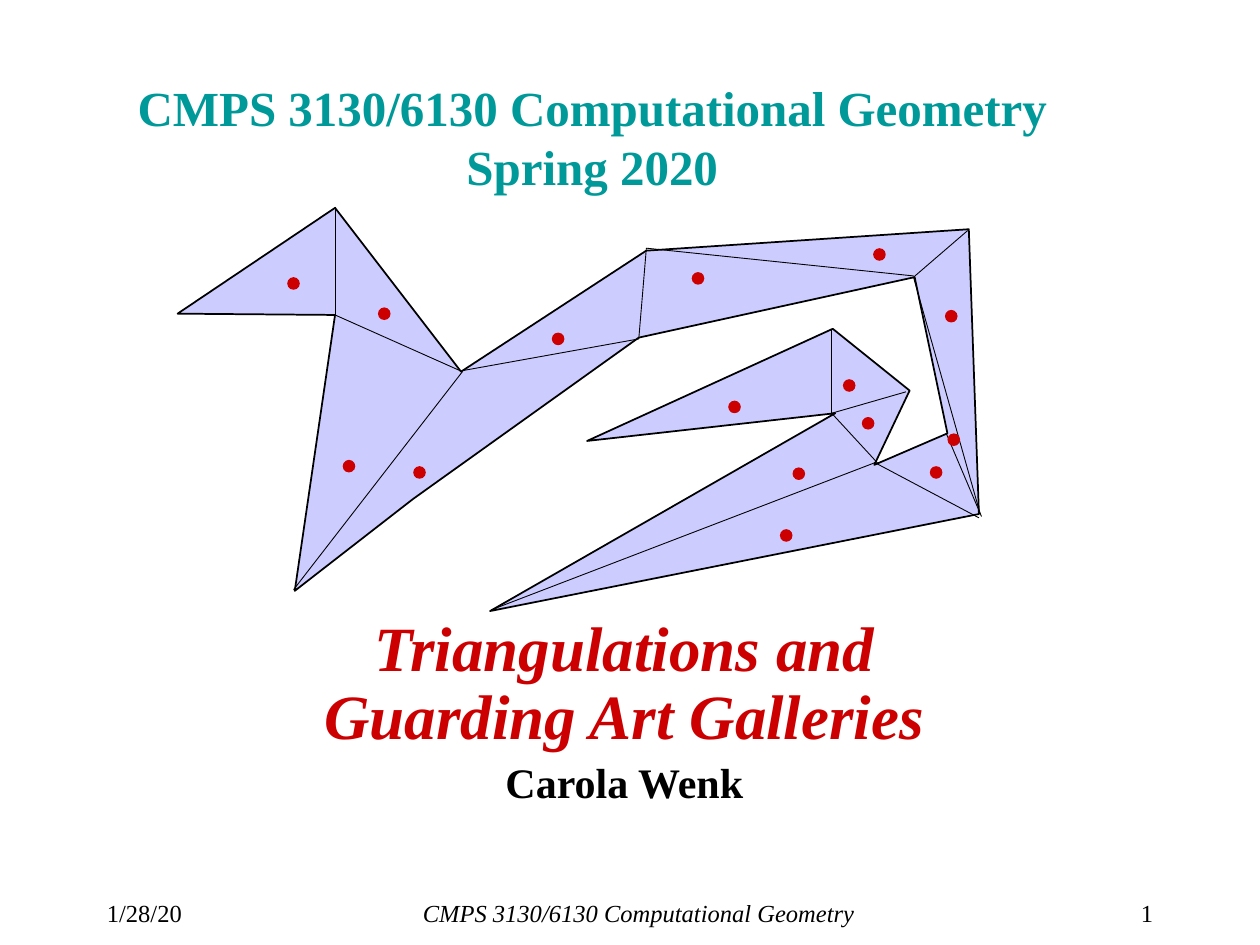
from typing import NamedTuple

from lxml import etree
from pptx import Presentation
from pptx.dml.color import RGBColor
from pptx.enum.shapes import MSO_CONNECTOR, MSO_SHAPE
from pptx.enum.text import MSO_ANCHOR, MSO_AUTO_SIZE, PP_ALIGN
from pptx.oxml.ns import qn
from pptx.util import Inches, Pt

LEFT, CENTER, RIGHT = PP_ALIGN.LEFT, PP_ALIGN.CENTER, PP_ALIGN.RIGHT
TOP, MIDDLE = MSO_ANCHOR.TOP, MSO_ANCHOR.MIDDLE
STRAIGHT, ELLIPSE = MSO_CONNECTOR.STRAIGHT, MSO_SHAPE.OVAL
FONT = "Times New Roman"
BLACK, TEAL, RED, LAVENDER = "000000", "009999", "CC0000", "CCCCFF"
GUARD_SIZE = 0.1


class Box(NamedTuple):
    left: float
    top: float
    width: float
    height: float


class Para(NamedTuple):
    lines: tuple[str, ...]
    size: float
    color: str = BLACK
    bold: bool = False
    italic: bool = False
    align: PP_ALIGN = LEFT
    spacing: float = 1.0
    before: float = 0


class Point(NamedTuple):
    x: float
    y: float


class Diagonal(NamedTuple):
    start: Point
    end: Point


TITLE = Para(("CMPS 3130/6130 Computational Geometry", "Spring 2020"),
             28, TEAL, bold=True, align=CENTER)
SUBTITLE = [
    Para(("Triangulations and", "Guarding Art Galleries"), 36, RED,
         bold=True, italic=True, align=CENTER, spacing=0.9, before=7.2),
    Para(("Carola Wenk",), 24, bold=True, align=CENTER, spacing=0.9, before=4.8),
]
FOOTERS = [
    (Box(0.75, 7.08, 0.95, 0.25), Para(("1/28/20",), 14)),
    (Box(1.9, 7.08, 6.34, 0.25),
     Para(("CMPS 3130/6130 Computational Geometry",), 14, italic=True, align=CENTER)),
    (Box(8.43, 7.08, 0.82, 0.25), Para(("1",), 14, align=RIGHT)),
]
GALLERY = [Point(*xy) for xy in (
    (1.41, 2.49), (2.66, 1.65), (3.66, 2.95), (5.13, 1.99), (7.69, 1.82), (7.77, 4.08),
    (3.89, 4.85), (6.63, 3.28), (4.66, 3.5), (6.61, 2.61), (7.22, 3.1), (6.94, 3.69),
    (7.52, 3.44), (7.26, 2.2), (5.07, 2.68), (3.28, 3.96), (2.34, 4.69), (2.66, 2.5),
)]
DIAGONALS = [Diagonal(Point(*a), Point(*b)) for a, b in (
    ((2.66, 1.64), (2.66, 2.5)), ((2.66, 2.5), (3.67, 2.95)),
    ((3.67, 2.95), (2.33, 4.68)), ((3.68, 2.94), (5.07, 2.69)),
    ((5.07, 2.69), (5.13, 1.97)), ((5.13, 1.97), (7.25, 2.19)),
    ((7.25, 2.2), (7.68, 1.83)), ((7.25, 2.2), (7.78, 4.08)),
    ((7.51, 3.44), (7.79, 4.1)), ((6.94, 3.67), (7.77, 4.11)),
    ((6.95, 3.67), (3.9, 4.84)), ((6.61, 3.29), (6.97, 3.68)),
    ((6.6, 3.28), (7.19, 3.11)), ((6.6, 2.61), (6.6, 3.29)),
)]
# Top left corner of each guard's dot
GUARDS = [Point(*xy) for xy in (
    (2.28, 2.2), (3, 2.44), (2.72, 3.65), (3.28, 3.7), (4.38, 2.64),
    (5.49, 2.16), (6.93, 1.97), (7.5, 2.46), (7.52, 3.44), (7.38, 3.7),
    (6.19, 4.2), (6.29, 3.71), (6.84, 3.31), (6.69, 3.01), (5.78, 3.18),
)]


def rgb(color: str) -> RGBColor:
    return RGBColor.from_string(color)


def write(tf, paras: list[Para], anchor: MSO_ANCHOR = TOP) -> None:
    tf.word_wrap = True
    tf.auto_size = MSO_AUTO_SIZE.NONE
    tf.vertical_anchor = anchor
    for i, para in enumerate(paras):
        p = tf.add_paragraph() if i else tf.paragraphs[0]
        p.alignment = para.align
        p.line_spacing = para.spacing
        p.space_before = Pt(para.before)
        for j, line in enumerate(para.lines):
            if j:
                p.add_line_break()
            r = p.add_run()
            r.text = line
            font = r.font
            font.name, font.size = FONT, Pt(para.size)
            font.bold, font.italic = para.bold, para.italic
            font.color.rgb = rgb(para.color)


def add_text(s, box: Box, paras: list[Para]) -> None:
    write(s.shapes.add_textbox(*map(Inches, box)).text_frame, paras)


def set_title(s, box: Box, para: Para) -> None:
    title = s.shapes.title
    title.left, title.top, title.width, title.height = map(Inches, box)
    write(title.text_frame, [para], MIDDLE)


def set_line(line, width: float) -> None:
    line.color.rgb = rgb(BLACK)
    line.width = Pt(width)


def add_polygon(s, points: list[Point]) -> None:
    start, *rest = [(Inches(pt.x), Inches(pt.y)) for pt in points]
    fb = s.shapes.build_freeform(*start)
    fb.add_line_segments(rest, close=True)
    sp = fb.convert_to_shape()
    sp.shadow.inherit = False
    sp.fill.solid()
    sp.fill.fore_color.rgb = rgb(LAVENDER)
    set_line(sp.line, 1)


def add_diagonal(s, diagonal: Diagonal) -> None:
    ends = map(Inches, (*diagonal.start, *diagonal.end))
    line = s.shapes.add_connector(STRAIGHT, *ends)
    set_line(line.line, 0.5)
    etree.SubElement(line._element.spPr, qn("a:effectLst"))


def add_guard(s, corner: Point) -> None:
    sp = s.shapes.add_shape(ELLIPSE, *map(Inches, (*corner, GUARD_SIZE, GUARD_SIZE)))
    sp.shadow.inherit = False
    sp.fill.solid()
    sp.fill.fore_color.rgb = rgb(RED)
    sp.line.fill.background()


def main() -> None:
    prs = Presentation()
    prs.slide_width, prs.slide_height = Inches(10), Inches(7.5)
    s = prs.slides.add_slide(prs.slide_layouts[5])
    set_title(s, Box(0.24, 0.54, 8.92, 1.08), TITLE)
    for box, para in FOOTERS:
        add_text(s, box, [para])
    add_text(s, Box(0.33, 4.85, 9.25, 1.67), SUBTITLE)
    add_polygon(s, GALLERY)
    for diagonal in DIAGONALS:
        add_diagonal(s, diagonal)
    for corner in GUARDS:
        add_guard(s, corner)
    prs.save("out.pptx")


if __name__ == "__main__":
    main()
